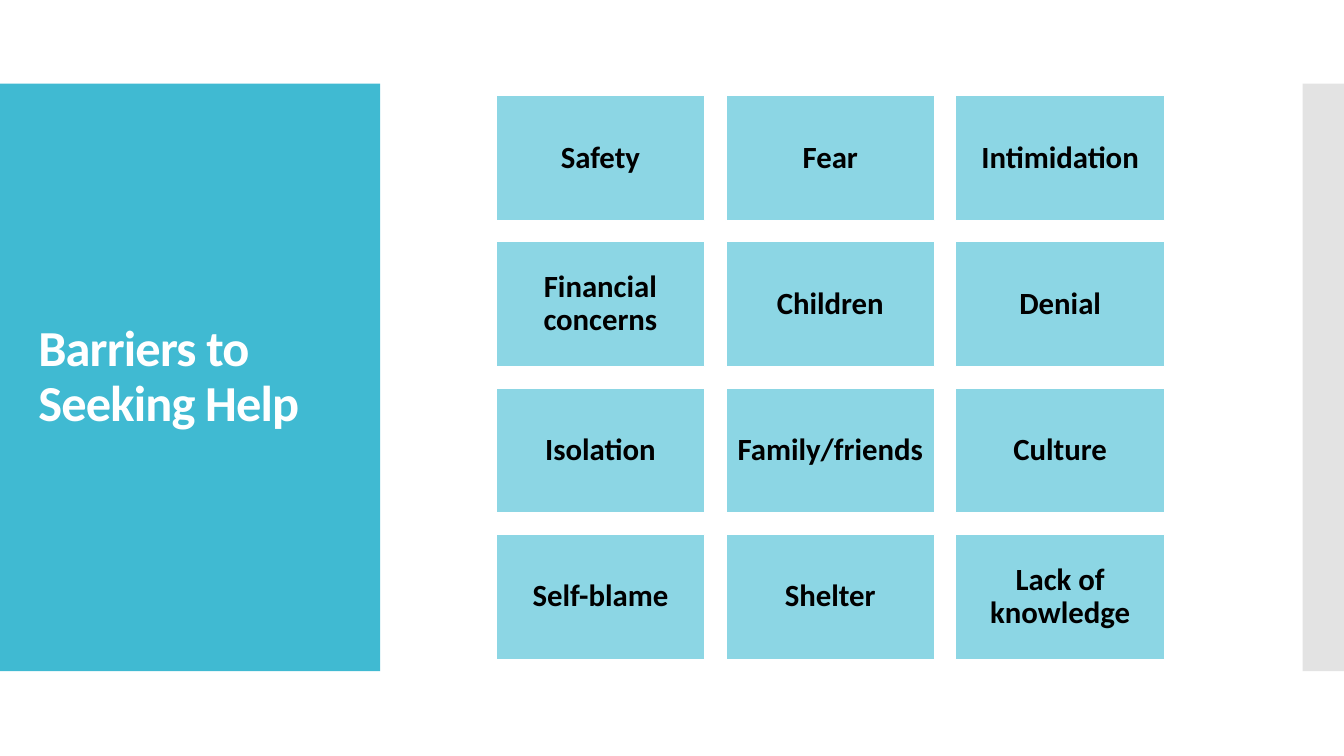
from lxml.etree import SubElement
from pptx import Presentation
from pptx.dml.color import RGBColor
from pptx.enum.shapes import MSO_SHAPE
from pptx.enum.text import MSO_ANCHOR, PP_ALIGN
from pptx.oxml.ns import qn
from pptx.util import Inches, Pt


def rgb(value):
    """Turn a hex string into a colour."""
    return RGBColor.from_string(value)


def write(shape, text, size, color, align=PP_ALIGN.LEFT, inset=0.1, spacing=None):
    """Put one bold, vertically centred paragraph into a shape."""
    tf = shape.text_frame
    tf.word_wrap = True
    tf.vertical_anchor = MSO_ANCHOR.MIDDLE
    tf.margin_left = tf.margin_right = Inches(inset)
    tf.margin_top = tf.margin_bottom = Inches(inset)
    p = tf.paragraphs[0]
    p.alignment = align
    p.line_spacing = 0.9
    r = p.add_run()
    r.text = text
    r.font.name = Style.font
    r.font.size = Pt(size)
    r.font.bold = True
    r.font.color.rgb = rgb(color)
    if spacing is not None:
        r.font._element.set("spc", str(round(spacing * 100)))


class Style:
    """Holds the look of the slide and draws its elements."""

    font = "Calibri"
    white, black = "FFFFFF", "000000"
    teal, aqua, grey = "40BAD2", "8CD6E4", "C8C8C8"

    def __init__(self, prs):
        """Add a title-only slide to the presentation."""
        self.s = prs.slides.add_slide(prs.slide_layouts[5])

    def rect(self, x, y, w, h, fill, line=None, opacity=None):
        """Draw a flat rectangle."""
        sp = self.s.shapes.add_shape(
            MSO_SHAPE.RECTANGLE, Inches(x), Inches(y), Inches(w), Inches(h))
        sp.shadow.inherit = False
        sp.fill.solid()
        sp.fill.fore_color.rgb = rgb(fill)
        if opacity is not None:
            color = sp.element.spPr.find(".//" + qn("a:srgbClr"))
            SubElement(color, qn("a:alpha")).set("val", str(opacity * 1000))
        if line:
            sp.line.color.rgb = rgb(line)
            sp.line.width = Pt(0.85)
        else:
            sp.line.fill.background()
        return sp

    def title(self, text, x, y, w, h, panel):
        """Place the title in front of its panel."""
        sp = self.s.shapes.title
        sp.left, sp.top, sp.width, sp.height = map(Inches, (x, y, w, h))
        panel.element.addnext(sp.element)
        write(sp, text, 36, self.white, spacing=-0.6)

    def card(self, text, x, y, w, h):
        """Draw one labelled card."""
        sp = self.rect(x, y, w, h, self.aqua, line=self.white)
        write(sp, text, 22, self.black, align=PP_ALIGN.CENTER, inset=0.09)

    def grid(self, labels, columns, x, y, w, h, dx, dy):
        """Lay out cards row by row."""
        for i, label in enumerate(labels):
            row, col = divmod(i, columns)
            self.card(label, x + col * dx, y + row * dy, w, h)


def main():
    """Build and save the slide."""
    prs = Presentation()
    prs.slide_width, prs.slide_height = Inches(13.33), Inches(7.5)
    style = Style(prs)
    panel = style.rect(0, 0.83, 3.77, 5.83, style.teal)
    style.title("Barriers to Seeking Help", 0.28, 1.23, 3.22, 5.03, panel)
    style.rect(12.92, 0.83, 0.41, 5.83, style.grey, opacity=50)
    barriers = [
        "Safety", "Fear", "Intimidation",
        "Financial concerns", "Children", "Denial",
        "Isolation", "Family/friends", "Culture",
        "Self-blame", "Shelter", "Lack of knowledge",
    ]
    style.grid(barriers, 3, 4.92, 0.95, 2.07, 1.24, dx=2.28, dy=1.45)
    prs.save("out.pptx")


if __name__ == "__main__":
    main()
